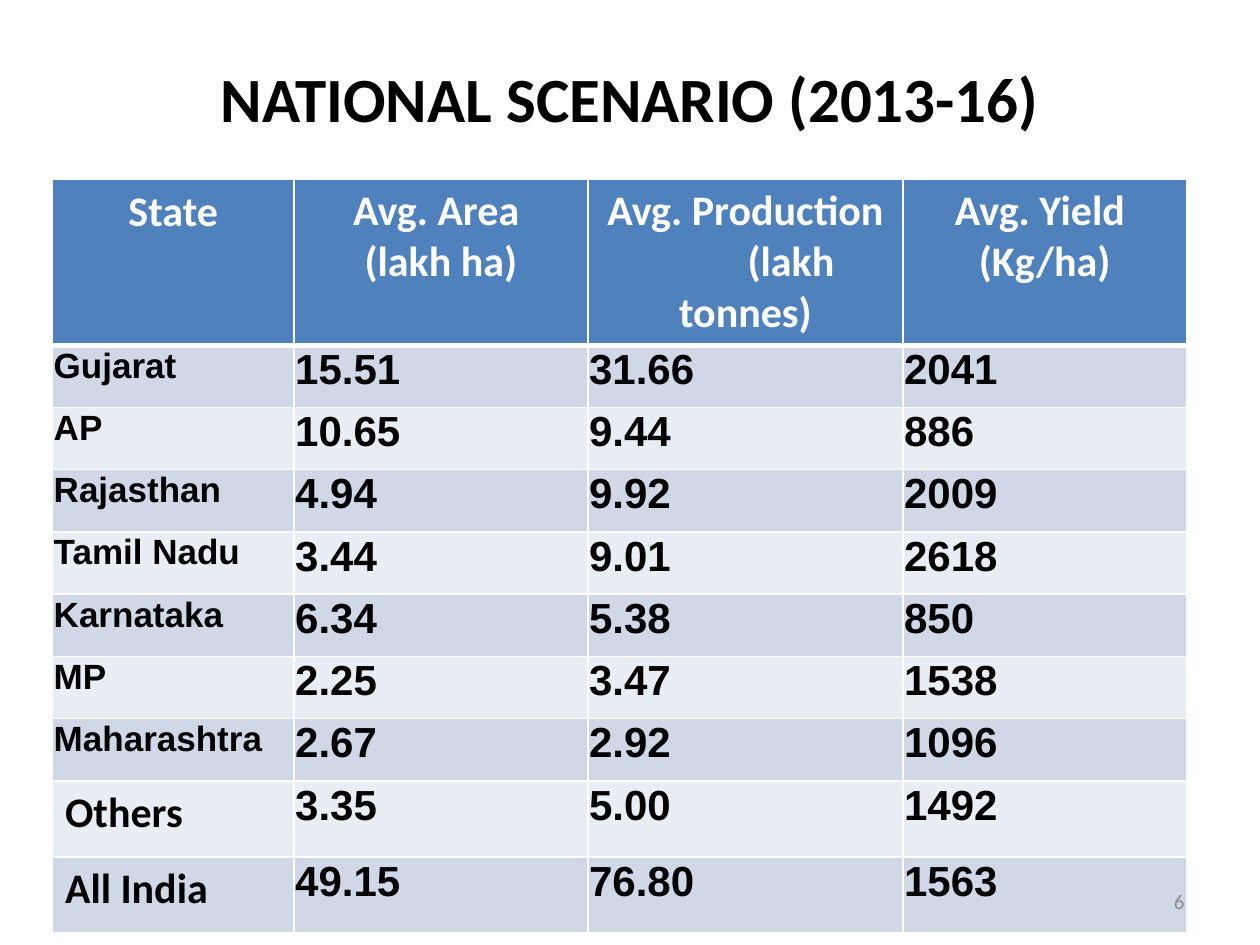
"""Build the national scenario slide: one title and one table of states."""
from lxml import etree
from pptx import Presentation, util as u
from pptx.dml.color import RGBColor
from pptx.enum import text
from pptx.oxml.ns import qn

TITLE = "NATIONAL SCENARIO (2013-16)"
PAGE_NUMBER = "6"
HEADERS = [
    ["State"],
    ["Avg. Area ", "(lakh ha)"],
    ["Avg. Production", "(lakh tonnes)"],
    ["Avg. Yield ", "(Kg/ha)"],
]
STATES = [
    ("Gujarat", "15.51", "31.66", "2041"),
    ("AP", "10.65", "9.44", "886"),
    ("Rajasthan", "4.94", "9.92", "2009"),
    ("Tamil Nadu", "3.44", "9.01", "2618"),
    ("Karnataka", "6.34", "5.38", "850"),
    ("MP", "2.25", "3.47", "1538"),
    ("Maharashtra", "2.67", "2.92", "1096"),
]
TOTALS = [
    ("Others", "3.35", "5.00", "1492"),
    ("All India", "49.15", "76.80", "1563"),
]

THEME = {
    "heading_font": "Calibri", "body_font": "Arial",
    "black": "000000", "white": "FFFFFF", "grey": "8C8C8C",
    "header_fill": "4F81BD", "bands": ("D0D8E8", "E9EDF4"),
    "title_size": 36, "table_size": 24, "state_size": 20, "number_size": 12,
}
COLUMN_WIDTHS = [138, 168, 180, 162]
HEADER_HEIGHT, STATE_HEIGHT, TOTAL_HEIGHT = 78, 35.6, 43.4
TABLE_LEFT, TABLE_TOP = 30, 102.2
UNIT_INDENT = 52
WIDE_MARGINS = (7.2, 3.6, 7.2, 3.6)
STATE_HEADER_MARGINS = (5, 0, 5, 0)
TIGHT_MARGINS = (0.72, 0.72, 0.72, 0)


def add_run(paragraph, words, size, font, color, bold=True):
    run = paragraph.add_run()
    run.text = words
    run.font.size = u.Pt(size)
    run.font.name = font
    run.font.bold = bold
    run.font.color.rgb = RGBColor.from_string(color)


def add_borders(cell, top, bottom):
    properties = cell._tc.get_or_add_tcPr()
    for side, width in (("L", 1), ("R", 1), ("T", top), ("B", bottom)):
        line = etree.SubElement(properties, qn(f"a:ln{side}"), w=str(u.Pt(width)))
        fill = etree.SubElement(line, qn("a:solidFill"))
        etree.SubElement(fill, qn("a:srgbClr"), val=THEME["white"])


def format_cell(cell, fill, margins, top=1, bottom=1):
    add_borders(cell, top, bottom)
    cell.fill.solid()
    cell.fill.fore_color.rgb = RGBColor.from_string(fill)
    (cell.margin_left, cell.margin_top,
     cell.margin_right, cell.margin_bottom) = map(u.Pt, margins)


def fill_header(table):
    for column, lines in enumerate(HEADERS):
        cell = table.cell(0, column)
        margins = WIDE_MARGINS if column else STATE_HEADER_MARGINS
        format_cell(cell, THEME["header_fill"], margins, bottom=3)
        for index, words in enumerate(lines):
            frame = cell.text_frame
            paragraph = frame.add_paragraph() if index else frame.paragraphs[0]
            paragraph.alignment = text.PP_ALIGN.CENTER
            paragraph.line_spacing = 1.0 if column else 1.15
            if words == "(lakh tonnes)":
                paragraph._p.get_or_add_pPr().set("indent", str(u.Pt(UNIT_INDENT)))
            add_run(paragraph, words, THEME["table_size"],
                    THEME["heading_font"], THEME["white"])


def fill_body(table):
    for row, values in enumerate(STATES + TOTALS, start=1):
        is_total = row > len(STATES)
        for column, words in enumerate(values):
            cell = table.cell(row, column)
            total_label = is_total and column == 0
            state_label = column == 0 and not is_total
            format_cell(cell, THEME["bands"][(row - 1) % 2],
                        WIDE_MARGINS if total_label else TIGHT_MARGINS,
                        top=3 if row == 1 else 1)
            add_run(cell.text_frame.paragraphs[0], words,
                    THEME["state_size" if state_label else "table_size"],
                    THEME["heading_font" if total_label else "body_font"],
                    THEME["black"])


def add_state_table(slide):
    heights = ([HEADER_HEIGHT] + [STATE_HEIGHT] * len(STATES)
               + [TOTAL_HEIGHT] * len(TOTALS))
    table = slide.shapes.add_table(
        len(heights), len(COLUMN_WIDTHS), u.Pt(TABLE_LEFT), u.Pt(TABLE_TOP),
        u.Pt(sum(COLUMN_WIDTHS)), u.Pt(sum(heights))).table
    for column, width in zip(table.columns, COLUMN_WIDTHS):
        column.width = u.Pt(width)
    for row, height in zip(table.rows, heights):
        row.height = u.Pt(height)
    fill_header(table)
    fill_body(table)


def add_title(slide):
    title = slide.shapes.title
    title.left, title.top = u.Pt(36), u.Pt(21.6)
    title.width, title.height = u.Pt(648), u.Pt(68.4)
    title.text_frame.vertical_anchor = text.MSO_ANCHOR.MIDDLE
    paragraph = title.text_frame.paragraphs[0]
    paragraph.alignment = text.PP_ALIGN.CENTER
    add_run(paragraph, TITLE, THEME["title_size"],
            THEME["heading_font"], THEME["black"])


def add_page_number(slide):
    frame = slide.shapes.add_textbox(
        u.Pt(516), u.Pt(500.4), u.Pt(168), u.Pt(28.8)).text_frame
    frame.word_wrap = True
    frame.vertical_anchor = text.MSO_ANCHOR.MIDDLE
    paragraph = frame.paragraphs[0]
    paragraph.alignment = text.PP_ALIGN.RIGHT
    add_run(paragraph, PAGE_NUMBER, THEME["number_size"],
            THEME["heading_font"], THEME["grey"], bold=False)


def main():
    presentation = Presentation()
    presentation.slide_width, presentation.slide_height = u.Pt(720), u.Pt(540)
    slide = presentation.slides.add_slide(presentation.slide_layouts[5])
    add_title(slide)
    add_state_table(slide)
    add_page_number(slide)
    presentation.save("out.pptx")


if __name__ == "__main__":
    main()
